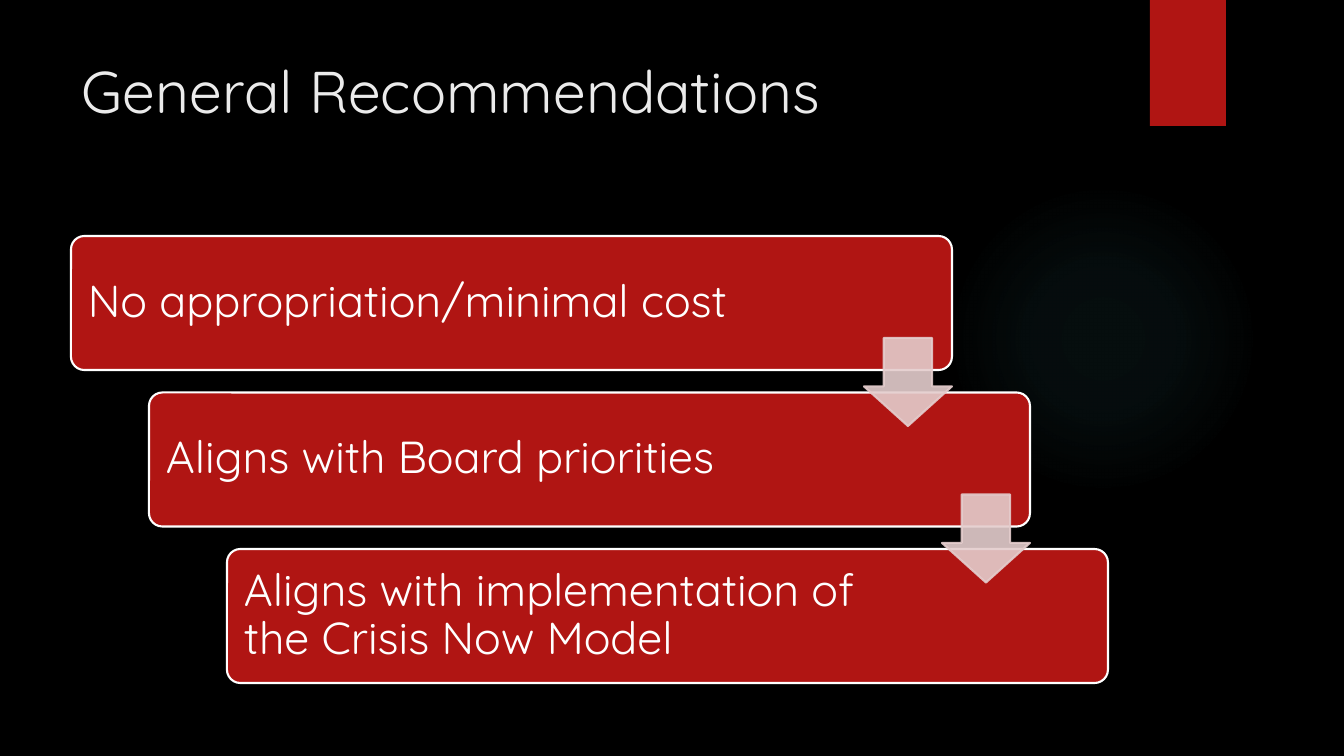
from lxml import etree
from pptx import Presentation
from pptx import util as u
from pptx.dml.color import RGBColor
from pptx.enum import shapes, text
from pptx.oxml import parse_xml
from pptx.oxml.ns import nsdecls, qn

BLACK = RGBColor(0x00, 0x00, 0x00)
WHITE = RGBColor(0xFF, 0xFF, 0xFF)
OFF_WHITE = RGBColor(0xEB, 0xEB, 0xEB)
RED = RGBColor(0xB0, 0x15, 0x13)
PINK = RGBColor(0xE4, 0xCC, 0xCC)
TEAL = RGBColor(0x50, 0xB9, 0xC1)
FONT = "Quicksand"
STEPS = [
    "No appropriation/minimal cost",
    "Aligns with Board priorities",
    "Aligns with implementation of the Crisis Now Model",
]


def px(count):
    return u.Emu(round(count * 914400 / 100.8))


def add_plain(page, kind, box, fill=None, line=None):
    shape = page.shapes.add_shape(kind, *map(px, box))
    shape.shadow.inherit = False
    if fill is not None:
        shape.fill.solid()
        shape.fill.fore_color.rgb = fill
    if line is None:
        shape.line.fill.background()
    else:
        shape.line.color.rgb = line
        shape.line.width = u.Pt(1.5)
    return shape


def write_text(shape, words, size, color, insets):
    frame = shape.text_frame
    frame.word_wrap = True
    frame.margin_left, frame.margin_top, frame.margin_right, frame.margin_bottom = map(px, insets)
    para = frame.paragraphs[0]
    para.text = words
    para.alignment = text.PP_ALIGN.LEFT
    para.font.name = FONT
    para.font.size = u.Pt(size)
    para.font.color.rgb = color
    return frame


def set_alpha(shape, percent):
    for color in shape._element.spPr.iter(qn("a:srgbClr")):
        etree.SubElement(color, qn("a:alpha")).set("val", str(percent * 1000))


def draw_backdrop(page, box):
    left, top, width, height = box
    page.background.fill.solid()
    page.background.fill.fore_color.rgb = BLACK

    # Soft round glow
    glow = add_plain(page, shapes.MSO_SHAPE.OVAL, (left + 948, top + 184, 310, 310), TEAL)
    stops = "".join(
        f'<a:gs pos="{position * 1000}"><a:srgbClr val="{TEAL}">'
        f'<a:alpha val="{alpha * 1000}"/></a:srgbClr></a:gs>'
        for position, alpha in [(0, 7), (36, 6), (69, 0)]
    )
    gradient = parse_xml(
        f'<a:gradFill {nsdecls("a")}><a:gsLst>{stops}</a:gsLst><a:path path="circle">'
        '<a:fillToRect l="50000" t="50000" r="50000" b="50000"/></a:path></a:gradFill>'
    )
    properties = glow._element.spPr
    properties.replace(properties.find(qn("a:solidFill")), gradient)

    # Red tab at the top edge
    add_plain(page, shapes.MSO_SHAPE.RECTANGLE, (left + 1150, top, 76, 126), RED)


def draw_title(page, box):
    title = page.shapes.add_textbox(*map(px, box))
    write_text(title, "General Recommendations", 42, OFF_WHITE, (10, 5, 10, 5))


def draw_staircase(page, box):
    left, top, width, height = box
    step_width, step_height, arrow_size = 881, 134, 88
    shift = (width - step_width) / (len(STEPS) - 1)
    pitch = (height - step_height) / (len(STEPS) - 1)
    corners = [(left + shift * i, top + pitch * i) for i in range(len(STEPS))]

    # Steps
    for (x, y), words in zip(corners, STEPS):
        step = add_plain(page, shapes.MSO_SHAPE.ROUNDED_RECTANGLE,
                         (x, y, step_width, step_height), RED, WHITE)
        step.adjustments[0] = 0.1
        frame = write_text(step, words, 32, WHITE, (13, 13, 177, 13))
        frame.vertical_anchor = text.MSO_ANCHOR.MIDDLE
        frame.paragraphs[0].line_spacing = 0.9

    # Arrows from each step to the next
    for x, y in corners[:-1]:
        arrow = add_plain(page, shapes.MSO_SHAPE.DOWN_ARROW,
                          (x + step_width - arrow_size, y + 102, arrow_size, arrow_size),
                          PINK, PINK)
        arrow.adjustments[0] = 0.55
        arrow.adjustments[1] = 0.45
        set_alpha(arrow, 90)


def main():
    deck = Presentation()
    deck.slide_width, deck.slide_height = px(1344), px(756)
    page = deck.slides.add_slide(deck.slide_layouts[6])
    draw_backdrop(page, (0, 0, 1344, 756))
    draw_title(page, (72, 50, 1037, 154))
    draw_staircase(page, (71, 236, 1037, 447))
    deck.save("out.pptx")


if __name__ == "__main__":
    main()
